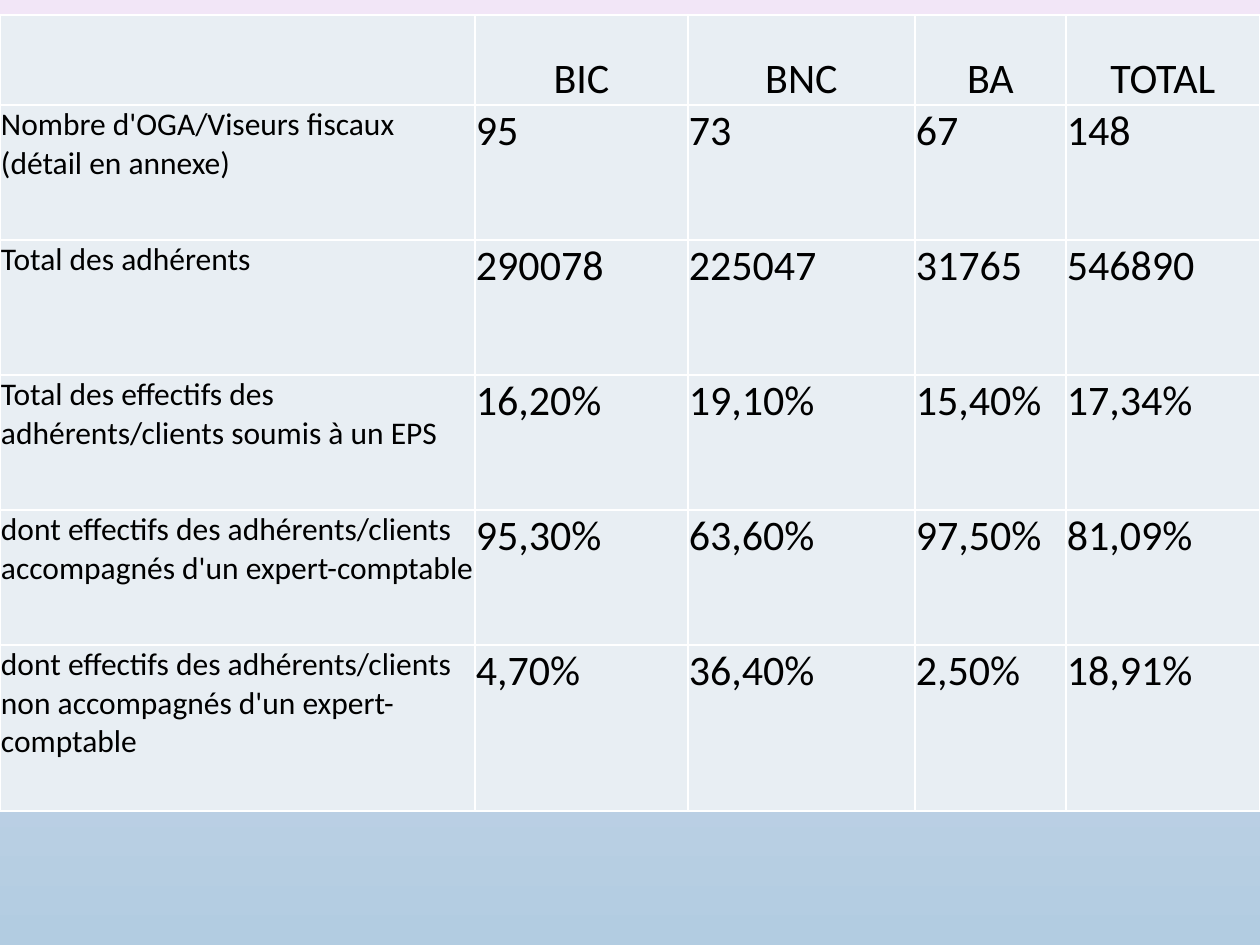
from pptx import Presentation
from pptx.dml.color import RGBColor as Rgb
from pptx.enum.text import MSO_ANCHOR as Anchor, PP_ALIGN as Align
from pptx.oxml import parse_xml
from pptx.oxml.ns import nsdecls
from pptx.util import Emu, Pt

PX = 914400 // 126
WIDTHS = [475, 213, 227, 151, 194]
HEIGHTS = [90] + [135] * 4 + [166]
ROWS = [
    ["", "BIC", "BNC", "BA", "TOTAL"],
    ["Nombre d'OGA/Viseurs fiscaux (détail en annexe)", "95", "73", "67", "148"],
    ["Total des adhérents", "290078", "225047", "31765", "546890"],
    ["Total des effectifs des adhérents/clients soumis à un EPS",
     "16,20%", "19,10%", "15,40%", "17,34%"],
    ["dont effectifs des adhérents/clients accompagnés d'un expert-comptable",
     "95,30%", "63,60%", "97,50%", "81,09%"],
    ["dont effectifs des adhérents/clients non accompagnés d'un expert-comptable",
     "4,70%", "36,40%", "2,50%", "18,91%"],
]


def px(n):
    return Emu(n * PX)


def color(code):
    return Rgb.from_string(code)


def paint_back(slide):
    fill = slide.background.fill
    fill.gradient()
    fill.gradient_angle = 270
    for stop, pos, code in zip(fill.gradient_stops, (0, 1), ("F2E6F7", "B2CCE1")):
        stop.position = pos
        stop.color.rgb = color(code)


def add_edges(cell):
    props = cell._tc.get_or_add_tcPr()
    for side in "LRTB":
        props.append(parse_xml(
            f'<a:ln{side} {nsdecls("a")} w="{Pt(1)}"><a:solidFill>'
            f'<a:srgbClr val="FFFFFF"/></a:solidFill></a:ln{side}>'))


def fill_cell(cell, text, size, head):
    add_edges(cell)
    cell.fill.solid()
    cell.fill.fore_color.rgb = color("E8EEF3")
    cell.margin_left = cell.margin_right = cell.margin_top = px(1)
    cell.margin_bottom = 0
    cell.vertical_anchor = Anchor.BOTTOM if head else Anchor.TOP
    cell.text_frame.text = text
    para = cell.text_frame.paragraphs[0]
    para.alignment = Align.CENTER if head else Align.LEFT
    font = para.font
    for run in para.runs:
        font = run.font
        font.bold = False
        font.color.rgb = color("000000")
    font.name = "Calibri"
    font.size = Pt(size)


def add_grid(slide):
    frame = slide.shapes.add_table(
        len(ROWS), len(WIDTHS), 0, px(15), px(sum(WIDTHS)), px(sum(HEIGHTS)))
    table = frame.table
    table.first_row = table.horz_banding = False
    for col, width in zip(table.columns, WIDTHS):
        col.width = px(width)
    for row, height, texts in zip(table.rows, HEIGHTS, ROWS):
        row.height = px(height)
        head = texts is ROWS[0]
        for i, (cell, text) in enumerate(zip(row.cells, texts)):
            fill_cell(cell, text, 24 if head or i else 18, head)


def main():
    deck = Presentation()
    deck.slide_width, deck.slide_height = px(1260), px(945)
    slide = deck.slides.add_slide(deck.slide_layouts[6])
    paint_back(slide)
    add_grid(slide)
    deck.save("out.pptx")


if __name__ == "__main__":
    main()
